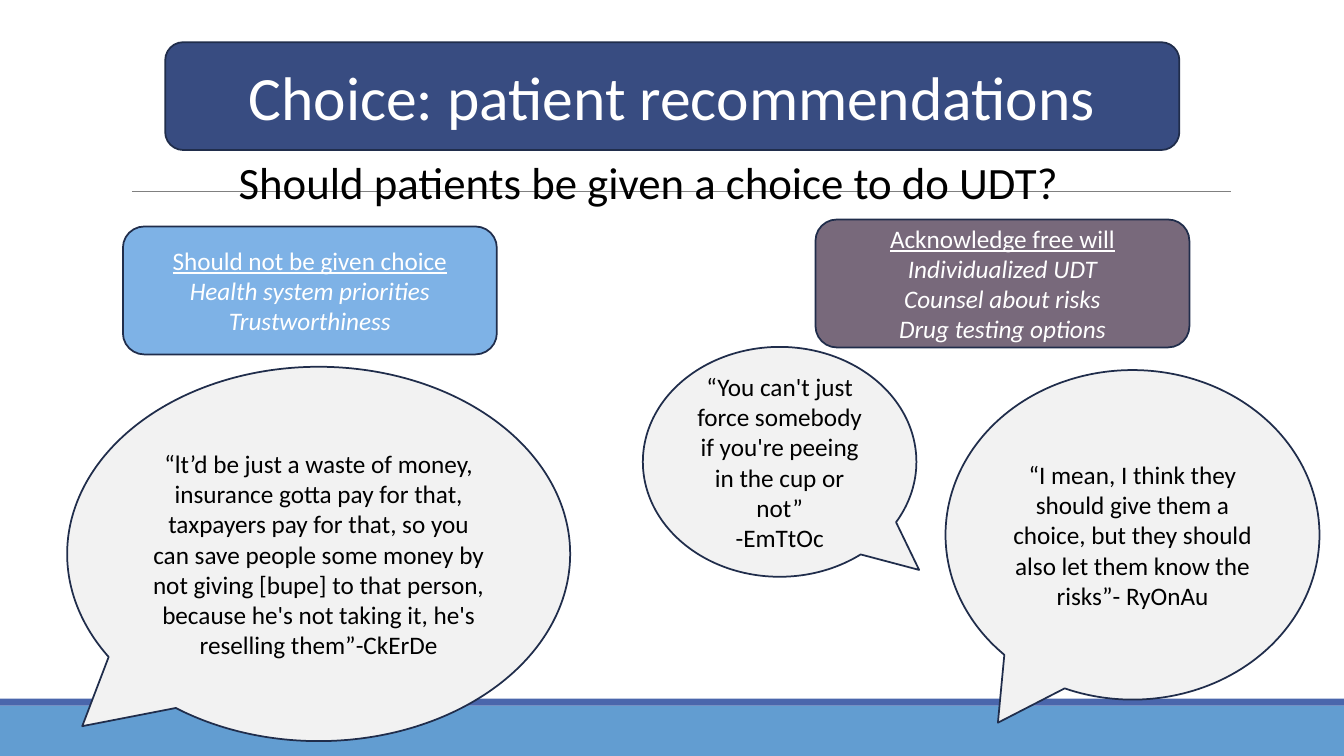
"""Build a slide on patient recommendations about choice in drug testing."""
from dataclasses import dataclass

import pptx
import pptx.dml.color
import pptx.enum.shapes
import pptx.enum.text
import pptx.oxml.ns
import pptx.util
from lxml import etree

Pt = pptx.util.Pt
SHAPES = pptx.enum.shapes.MSO_SHAPE
ALIGN = pptx.enum.text.PP_ALIGN
ANCHOR = pptx.enum.text.MSO_ANCHOR


@dataclass(frozen=True)
class Theme:
    """Hold the colours, font and type sizes of the slide."""

    font: str = "Calibri"
    title_size: float = 44
    question_size: float = 32
    body_size: float = 18
    outline_width: float = 1.25
    rule_width: float = 0.5
    white: str = "FFFFFF"
    black: str = "000000"
    outline: str = "202D4B"
    rule: str = "808080"
    banner: str = "384C81"
    footer: str = "629DD1"
    footer_edge: str = "4A66AC"
    against: str = "7EB2E6"
    in_favour: str = "78697B"
    bubble: str = "F2F2F2"


THEME = Theme()


def rgb(code):
    """Turn a hexadecimal code into a colour."""
    return pptx.dml.color.RGBColor.from_string(code)


def place(shape, frame):
    """Move and size a shape to left, top, width and height in points."""
    shape.left, shape.top, shape.width, shape.height = map(Pt, frame)


def add_block(page, kind, frame, fill, outline=None):
    """Add a filled preset shape, outlined if a colour is given."""
    block = page.shapes.add_shape(kind, *map(Pt, frame))
    block.shadow.inherit = False
    block.fill.solid()
    block.fill.fore_color.rgb = rgb(fill)
    if outline:
        block.line.color.rgb = rgb(outline)
        block.line.width = Pt(THEME.outline_width)
    else:
        block.line.fill.background()
    return block


def write(box, lines, size, colour, align=ALIGN.CENTER, anchor=ANCHOR.MIDDLE):
    """Write one paragraph per line and format its runs."""
    text_frame = box.text_frame
    text_frame.word_wrap = True
    text_frame.auto_size = pptx.enum.text.MSO_AUTO_SIZE.NONE
    text_frame.vertical_anchor = anchor
    text_frame.text = "\n".join(lines)
    for para in text_frame.paragraphs:
        para.alignment = align
        for span in para.runs:
            span.font.name = THEME.font
            span.font.size = Pt(size)
            span.font.color.rgb = rgb(colour)


def add_rule(page, left, right, top):
    """Add a thin horizontal line."""
    rule = page.shapes.add_connector(
        pptx.enum.shapes.MSO_CONNECTOR.STRAIGHT,
        Pt(left), Pt(top), Pt(right), Pt(top))
    rule.line.color.rgb = rgb(THEME.rule)
    rule.line.width = Pt(THEME.rule_width)
    properties = rule.element.find(pptx.oxml.ns.qn("p:spPr"))
    etree.SubElement(properties, pptx.oxml.ns.qn("a:effectLst"))


def add_title(page, frame, text):
    """Add the banner and set the title placeholder on top of it."""
    add_block(page, SHAPES.FLOWCHART_ALTERNATE_PROCESS, frame,
              THEME.banner, THEME.outline)
    title = page.shapes.title
    place(title, frame)
    write(title, [text], THEME.title_size, THEME.white)
    page.shapes.element.append(title.element)


def add_question(page, frame, text):
    """Add the question below the banner."""
    box = page.shapes.add_textbox(*map(Pt, frame))
    write(box, [text], THEME.question_size, THEME.black,
          ALIGN.LEFT, ANCHOR.TOP)


def add_panel(page, left, top, fill, lines):
    """Add a rounded panel with an underlined heading and italic themes."""
    panel = add_block(page, SHAPES.ROUNDED_RECTANGLE,
                      (left, top, 267.1, 91.4), fill, THEME.outline)
    write(panel, lines, THEME.body_size, THEME.white)
    heading, *themes = panel.text_frame.paragraphs
    heading.runs[0].font.underline = True
    for para in themes:
        para.runs[0].font.italic = True


def add_quote(page, frame, tail, lines):
    """Add a speech bubble whose tail points to the given offset."""
    bubble = add_block(page, SHAPES.OVAL_CALLOUT, frame,
                       THEME.bubble, THEME.outline)
    bubble.adjustments[0], bubble.adjustments[1] = tail
    write(bubble, lines, THEME.body_size, THEME.black)


def main():
    """Build the slide and save it."""
    deck = pptx.Presentation()
    deck.slide_width, deck.slide_height = Pt(960), Pt(540)
    page = deck.slides.add_slide(deck.slide_layouts.get_by_name("Title Only"))

    add_block(page, SHAPES.RECTANGLE, (0, 504, 960, 36), THEME.footer)
    add_block(page, SHAPES.RECTANGLE, (0, 499, 960, 5), THEME.footer_edge)
    add_rule(page, 94.3, 879.1, 136.6)
    add_title(page, (118, 30.2, 724.4, 77), "Choice: patient recommendations")
    add_panel(page, 87.8, 161.8, THEME.against, [
        "Should not be given choice", "Health system priorities",
        "Trustworthiness"])
    add_question(page, (163.4, 106.6, 645.8, 46),
                 "Should patients be given a choice to do UDT?")
    add_panel(page, 582.5, 156.8, THEME.in_favour, [
        "Acknowledge free will", "Individualized UDT",
        "Counsel about risks", "Drug testing options"])
    add_quote(page, (675.4, 264.4, 267.1, 235.4), (-0.36, 0.57), [
        "“I mean, I think they should give them a choice, but they should "
        "also let them know the risks”- RyOnAu"])
    add_quote(page, (459.2, 247.8, 195.4, 164.2), (0.51, 0.47), [
        "“You can't just force somebody if you're peeing in the cup or not”",
        "-EmTtOc"])
    add_quote(page, (48, 262, 359.3, 267.4), (-0.47, 0.46), [
        "“lt’d be just a waste of money, insurance gotta pay for that, "
        "taxpayers pay for that, so you can save people some money by not "
        "giving [bupe] to that person, because he's not taking it, he's "
        "reselling them”-CkErDe"])
    deck.save("out.pptx")


if __name__ == "__main__":
    main()
